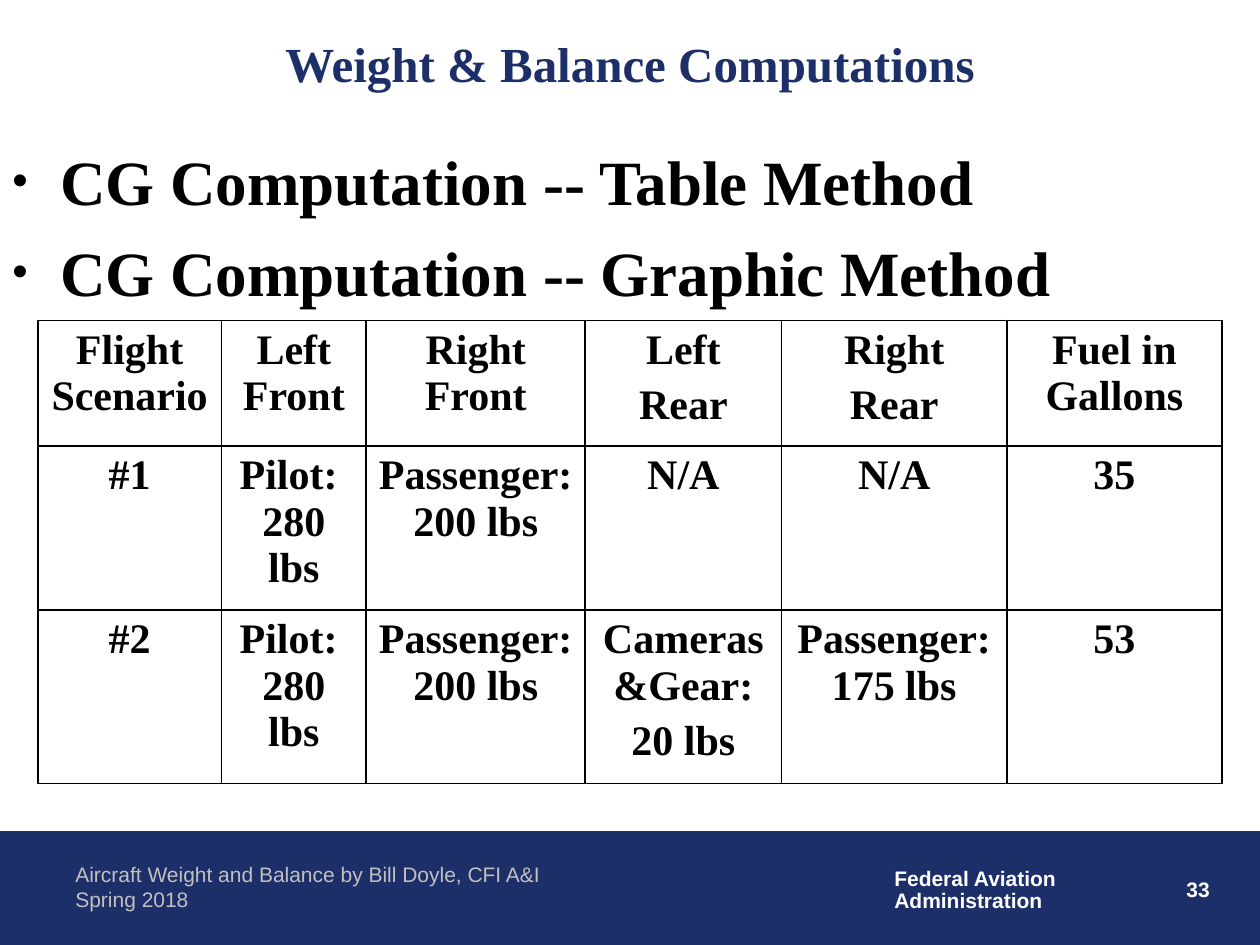
from lxml import etree
from pptx import Presentation
from pptx import util as u
from pptx.dml.color import RGBColor
from pptx.enum import shapes, text
from pptx.oxml.ns import qn

HUES = {"navy": "1D2F68", "white": "FFFFFF", "grey": "C0C0C0", "black": "000000"}
SERIF, SANS = "Times New Roman", "Arial"
WIDE, HIGH = u.Inches(10), u.Inches(7.5)
MID, RIGHT = text.PP_ALIGN.CENTER, text.PP_ALIGN.RIGHT

COLS = [1.46, 1.15, 1.74, 1.56, 1.79, 1.71]
ROWS = [1, 1.3, 1.38]
# "\n" starts a paragraph, "\v" breaks a line
CELLS = [
    ["Flight\vScenario", "Left Front", "Right\vFront", "Left\nRear", "Right\nRear",
     "Fuel in\vGallons"],
    ["#1", "Pilot: \v280 lbs", "Passenger: 200 lbs", "N/A", "N/A", "35"],
    ["#2", "Pilot: \v280 lbs", "Passenger: 200 lbs", "Cameras &Gear:\n20 lbs",
     "Passenger: 175 lbs", "53"],
]


def hue(name):
    return RGBColor.from_string(HUES[name])


def part(box, x, y, w, h):
    """Return the part of box given by shares of its width and height."""
    left, top, wide, high = box
    return (int(left + x * wide), int(top + y * high), int(w * wide), int(h * high))


def place(shape, box):
    shape.left, shape.top, shape.width, shape.height = box


def write(frame, words, size, face, tint, bold=True, align=None, gap=0, line=None):
    """Fill a text frame; gap is the space in points between paragraphs."""
    frame.text = words
    for n, para in enumerate(frame.paragraphs):
        para.alignment = align
        para.space_before = u.Pt(gap if n else 0)
        if line:
            para.line_spacing = line
        for run in para.runs:
            font = run.font
            font.size, font.name, font.bold = u.Pt(size), face, bold
            font.color.rgb = hue(tint)


def label(slide, box, words, wrap=True, **look):
    frame = slide.shapes.add_textbox(*box).text_frame
    frame.word_wrap = wrap
    write(frame, words, 12, SANS, **look)


def footer(slide, box):
    band = slide.shapes.add_shape(shapes.MSO_SHAPE.RECTANGLE, *box)
    band.shadow.inherit = False
    band.fill.solid()
    band.fill.fore_color.rgb = band.line.color.rgb = hue("navy")
    band.line.width = u.Pt(0.75)
    label(slide, part(box, 0.76, 0.34, 0.21, 0.56), "33", tint="white", align=RIGHT)
    label(slide, part(box, 0.7, 0.28, 0.15, 0.49), "Federal Aviation\nAdministration",
          wrap=False, tint="white", line=0.85)
    label(slide, part(box, 0.05, 0.21, 0.52, 0.34),
          "Aircraft Weight and Balance by Bill Doyle, CFI A&I", tint="grey", bold=False)
    label(slide, part(box, 0.05, 0.43, 0.41, 0.34), "Spring 2018", tint="grey", bold=False)


def heading(slide, box):
    title = slide.shapes.title
    place(title, box)
    frame = title.text_frame
    frame.auto_size = text.MSO_AUTO_SIZE.NONE
    frame.vertical_anchor = text.MSO_ANCHOR.MIDDLE
    write(frame, "Weight & Balance Computations", 28, SERIF, "navy", align=MID)


def bullets(slide, box):
    frame = slide.shapes.add_textbox(*box).text_frame
    frame.word_wrap = True
    frame.margin_top = u.Inches(0.11)
    write(frame, "CG Computation -- Table Method\nCG Computation -- Graphic Method",
          36, SERIF, "black", gap=9)
    for para in frame.paragraphs:
        props = para._p.get_or_add_pPr()
        dent = u.Inches(0.38)
        props.set("marL", str(dent))
        props.set("indent", str(-dent))
        etree.SubElement(props, qn("a:buSzPct"), val="70000")
        etree.SubElement(props, qn("a:buFont"), typeface=SANS)
        etree.SubElement(props, qn("a:buChar"), char="•")


def border(cell):
    props = cell._tc.get_or_add_tcPr()
    for n, side in enumerate(("lnL", "lnR", "lnT", "lnB")):
        edge = etree.Element(qn(f"a:{side}"), w=str(u.Pt(1)))
        fill = etree.SubElement(edge, qn("a:solidFill"))
        etree.SubElement(fill, qn("a:srgbClr"), val=HUES["black"])
        props.insert(n, edge)


def grid(slide, box):
    table = slide.shapes.add_table(len(ROWS), len(COLS), *box).table
    table.first_row = table.horz_banding = False
    for col, wide in zip(table.columns, COLS):
        col.width = int(box[2] * wide / sum(COLS))
    for row, high, line in zip(table.rows, ROWS, CELLS):
        row.height = int(box[3] * high / sum(ROWS))
        for cell, words in zip(row.cells, line):
            write(cell.text_frame, words, 24, SERIF, "black", align=MID, gap=5)
            cell.fill.background()
            border(cell)


def main():
    deck = Presentation()
    deck.slide_width, deck.slide_height = WIDE, HIGH
    slide = deck.slides.add_slide(deck.slide_layouts[5])
    page = (0, 0, WIDE, HIGH)
    footer(slide, part(page, 0, 0.88, 1, 0.12))
    heading(slide, part(page, 0, 0, 1, 2 / 15))
    bullets(slide, part(page, 0, 0.136, 1, 0.21))
    grid(slide, part(page, 0.03, 0.339, 0.94, 0.49))
    deck.save("out.pptx")


if __name__ == "__main__":
    main()
